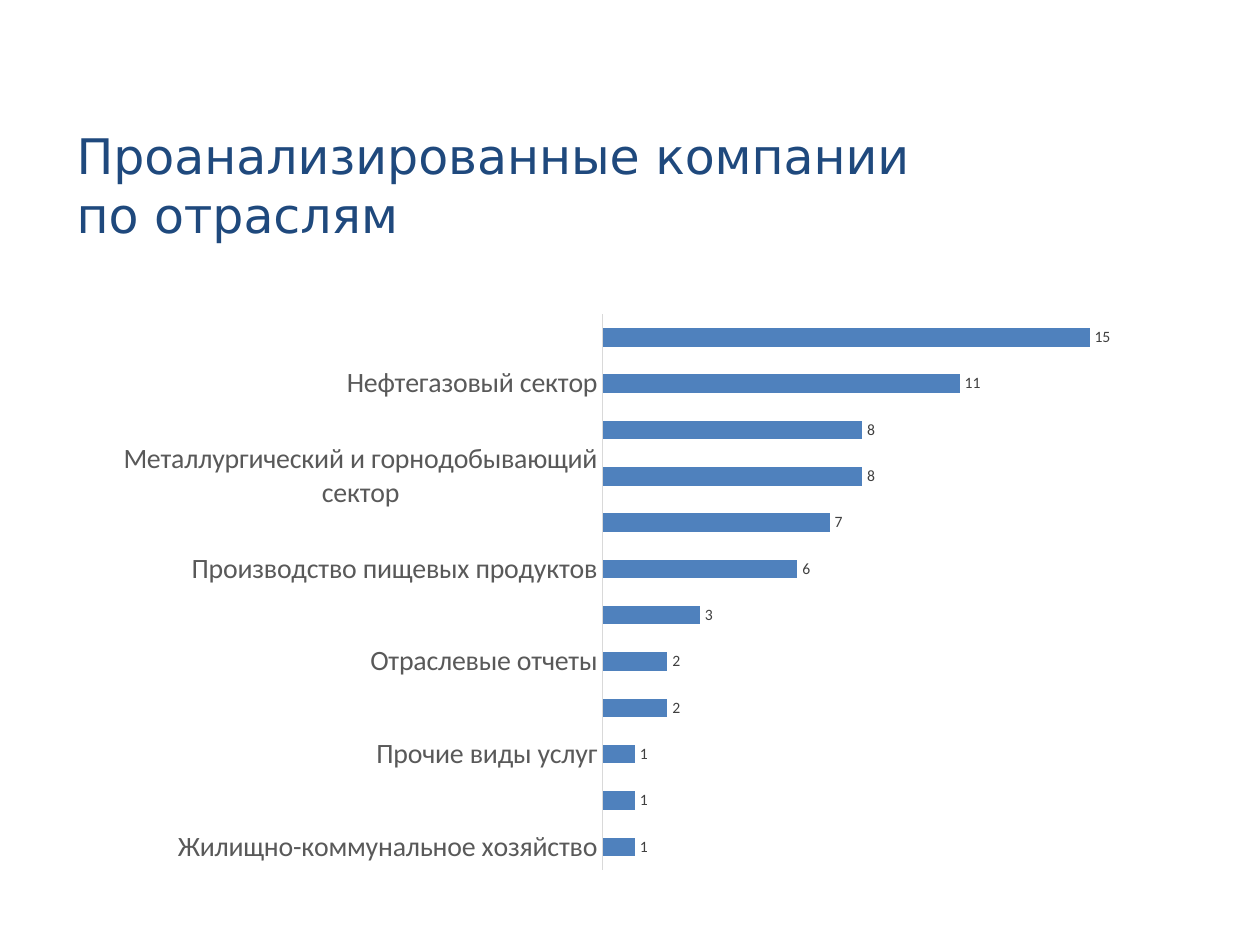
from typing import Any, NamedTuple

from lxml.etree import SubElement
from pptx import Presentation
from pptx.chart.data import CategoryChartData
from pptx.dml.color import RGBColor
from pptx.enum.chart import XL_CHART_TYPE, XL_LABEL_POSITION, XL_TICK_LABEL_POSITION, XL_TICK_MARK
from pptx.enum.text import MSO_ANCHOR
from pptx.oxml.ns import qn
from pptx.util import Inches, Pt

NAVY = RGBColor(0x1F, 0x49, 0x7D)
BLUE = RGBColor(0x4F, 0x81, 0xBD)
BLACK = RGBColor(0, 0, 0)
DARK = RGBColor(0x40, 0x40, 0x40)
GRAY = RGBColor(0x59, 0x59, 0x59)
LIGHT = RGBColor(0xD9, 0xD9, 0xD9)
WIDTH, HEIGHT = 10, 7.5


class Box(NamedTuple):
    x: float
    y: float
    w: float
    h: float

    def lengths(self) -> list[int]:
        return [Inches(share * side) for share, side in zip(self, (WIDTH, HEIGHT) * 2)]


class Sector(NamedTuple):
    name: str
    companies: int


TITLE_LINES = ("Проанализированные компании ", "по отраслям")
TITLE_BOX = Box(0.051, 0.112, 0.923, 0.167)
CHART_BOX = Box(0.098, 0.3, 0.803, 0.652)
PLOT_BOX = Box(0.471, 0.05, 0.516, 0.902)
SECTORS = (
    Sector("Жилищно-коммунальное хозяйство", 1),
    Sector("Здравоохранение", 1),
    Sector("Прочие виды услуг", 1),
    Sector("Транспортный сектор", 2),
    Sector("Отраслевые отчеты", 2),
    Sector("Телекоммуникационный сектор", 3),
    Sector("Производство пищевых продуктов", 6),
    Sector("Химический и нефтехимический сектор", 7),
    Sector("Металлургический и горнодобывающий сектор", 8),
    Sector("Финансовый сектор", 8),
    Sector("Нефтегазовый сектор", 11),
    Sector("Энергетический сектор", 15),
)


def apply(target: Any, values: dict[str, Any]) -> None:
    for key, value in values.items():
        setattr(target, key, value)


def set_font(font: Any, name: str, size: float, color: RGBColor) -> None:
    apply(font, {"name": name, "size": Pt(size), "bold": False})
    font.color.rgb = color


def add_title(s: Any) -> None:
    tf = s.shapes.add_textbox(*TITLE_BOX.lengths()).text_frame
    apply(tf, {"word_wrap": True, "vertical_anchor": MSO_ANCHOR.MIDDLE})
    p = tf.paragraphs[0]
    for i, line in enumerate(TITLE_LINES):
        if i:
            p.add_line_break()
        r = p.add_run()
        r.text = line
        set_font(r.font, "DejaVu Sans", 28, NAVY)


def place_plot(chart: Any, box: Box) -> None:
    area = chart.plots[0]._element.getparent()
    layout = area.find(qn("c:layout"))
    if layout is None:
        layout = SubElement(area, qn("c:layout"))
        area.insert(0, layout)
    manual = SubElement(layout, qn("c:manualLayout"))
    settings = {"layoutTarget": "inner", "xMode": "edge", "yMode": "edge", **box._asdict()}
    for tag, value in settings.items():
        SubElement(manual, qn(f"c:{tag}")).set("val", str(value))


def add_sector_chart(s: Any) -> None:
    data = CategoryChartData()
    data.categories = [sector.name for sector in SECTORS]
    data.add_series("Series 1", [sector.companies for sector in SECTORS])
    chart = s.shapes.add_chart(XL_CHART_TYPE.BAR_CLUSTERED, *CHART_BOX.lengths(), data).chart
    apply(chart, {"has_legend": False, "has_title": False})
    set_font(chart.font, "Calibri", 10, BLACK)
    place_plot(chart, PLOT_BOX)

    plot = chart.plots[0]
    apply(plot, {"gap_width": 150, "overlap": -25, "vary_by_categories": False,
                 "has_data_labels": True})
    apply(plot.data_labels, {"show_value": True, "position": XL_LABEL_POSITION.OUTSIDE_END})
    set_font(plot.data_labels.font, "Calibri", 9, DARK)
    fill = plot.series[0].format.fill
    fill.solid()
    fill.fore_color.rgb = BLUE

    no_ticks = {"major_tick_mark": XL_TICK_MARK.NONE, "minor_tick_mark": XL_TICK_MARK.NONE,
                "has_major_gridlines": False}
    axis = chart.category_axis
    apply(axis, {**no_ticks, "tick_label_position": XL_TICK_LABEL_POSITION.NEXT_TO_AXIS})
    set_font(axis.tick_labels.font, "Calibri", 16, GRAY)
    axis.format.line.width = Pt(0.75)
    axis.format.line.color.rgb = LIGHT
    apply(chart.value_axis, {**no_ticks, "visible": False,
                             "minimum_scale": 0, "maximum_scale": 16})


def main() -> None:
    prs = Presentation()
    apply(prs, {"slide_width": Inches(WIDTH), "slide_height": Inches(HEIGHT)})
    s = prs.slides.add_slide(prs.slide_layouts[6])
    add_title(s)
    add_sector_chart(s)
    prs.save("out.pptx")


if __name__ == "__main__":
    main()
